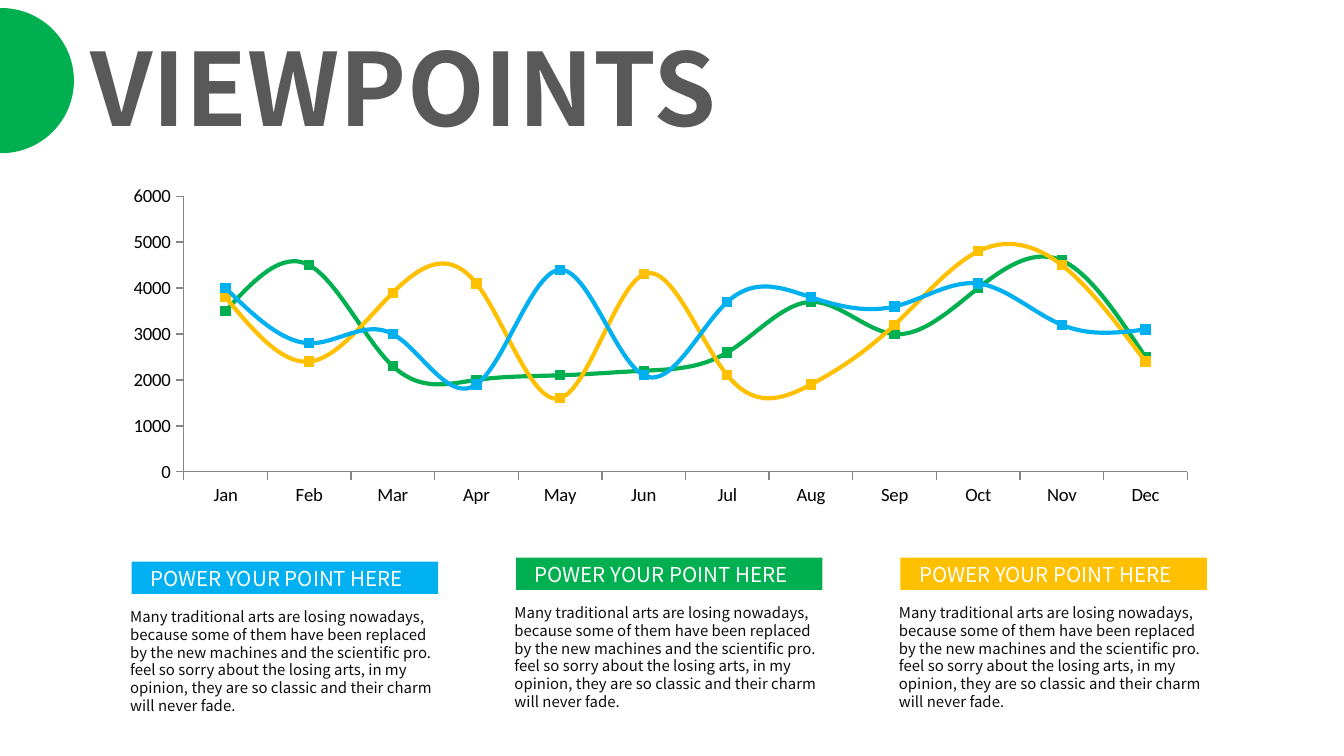
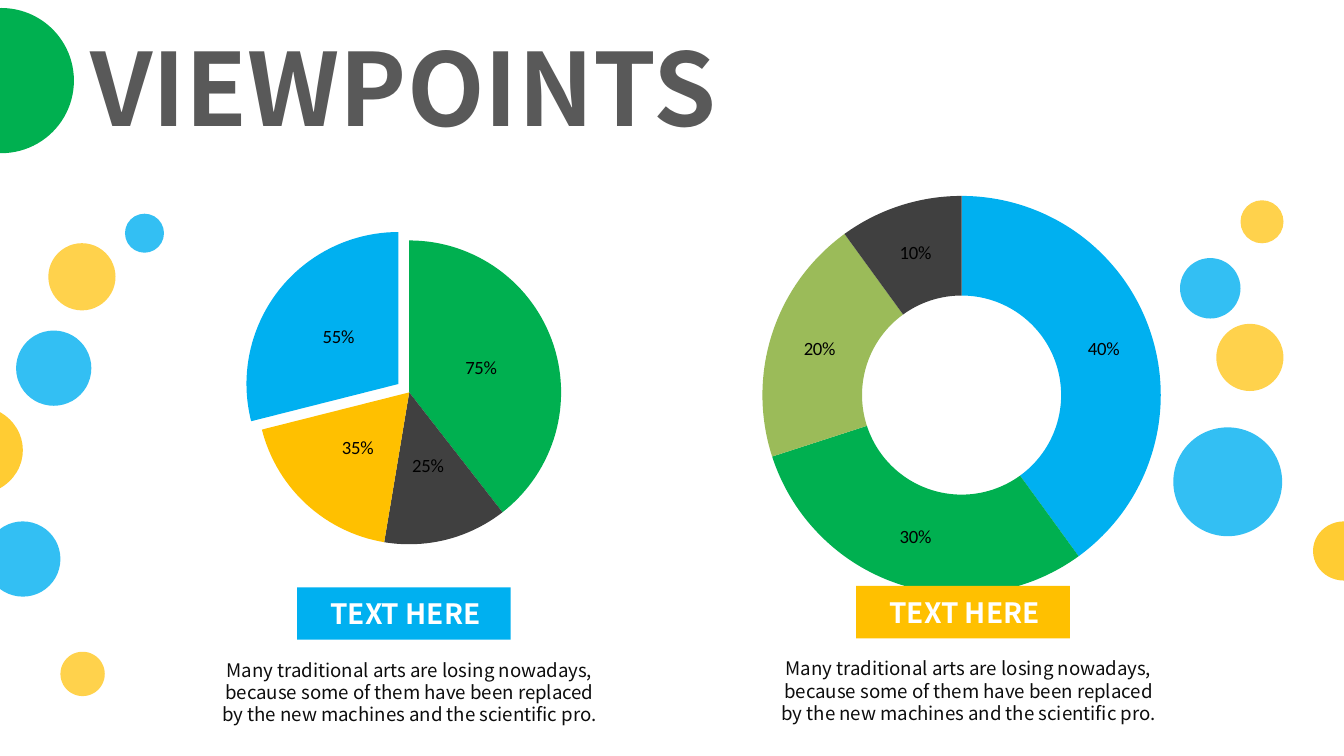
from dataclasses import dataclass

from lxml import etree
from pptx import Presentation
from pptx.chart.data import CategoryChartData
from pptx.dml.color import RGBColor
from pptx.enum.chart import XL_CHART_TYPE, XL_LABEL_POSITION, XL_MARKER_STYLE, XL_TICK_MARK
from pptx.enum.shapes import MSO_SHAPE
from pptx.enum.text import MSO_ANCHOR, MSO_AUTO_SIZE, PP_ALIGN
from pptx.oxml.ns import qn
from pptx.util import Inches, Pt

LINE, PIE, DOUGHNUT = XL_CHART_TYPE.LINE_MARKERS, XL_CHART_TYPE.PIE, XL_CHART_TYPE.DOUGHNUT
LABEL_CENTER = XL_LABEL_POSITION.CENTER
SQUARE = XL_MARKER_STYLE.SQUARE
TICK_OUT = XL_TICK_MARK.OUTSIDE
RECTANGLE, OVAL = MSO_SHAPE.RECTANGLE, MSO_SHAPE.OVAL
TOP = MSO_ANCHOR.TOP
GROW = MSO_AUTO_SIZE.SHAPE_TO_FIT_TEXT
LEFT, CENTER = PP_ALIGN.LEFT, PP_ALIGN.CENTER


@dataclass(frozen=True)
class Theme:
    """Colours, fonts and type sizes of the deck."""
    green: str = "00B050"
    blue: str = "00B0F0"
    amber: str = "FFC000"
    olive: str = "9BBB59"
    charcoal: str = "404040"
    title_grey: str = "595959"
    axis_grey: str = "868686"
    ink: str = "0D0D0D"
    white: str = "FFFFFF"
    black: str = "000000"
    text_font: str = "Noto Sans CJK SC"
    chart_font: str = "Calibri"
    title_size: int = 54
    banner_size: int = 15
    heading_size: int = 11
    body_size: int = 10
    chart_size: int = 10
    small_size: int = 8


THEME = Theme()
TITLE = "VIEWPOINTS"
STORY = [
    "Many traditional arts are losing nowadays,",
    "because some of them have been replaced",
    "by the new machines and the scientific pro.",
    "feel so sorry about the losing arts, in my",
    "opinion, they are so classic and their charm",
    "will never fade.",
]
MONTHS = ["Jan", "Feb", "Mar", "Apr", "May", "Jun", "Jul", "Aug", "Sep", "Oct", "Nov", "Dec"]
TRENDS = [
    (THEME.green, [3500, 4500, 2300, 2000, 2100, 2200, 2600, 3700, 3000, 4000, 4600, 2500]),
    (THEME.amber, [3800, 2400, 3900, 4100, 1600, 4300, 2100, 1900, 3200, 4800, 4500, 2400]),
    (THEME.blue, [4000, 2800, 3000, 1900, 4400, 2100, 3700, 3800, 3600, 4100, 3200, 3100]),
]
PIE_SLICES = [(THEME.green, 0.75), (THEME.charcoal, 0.25), (THEME.amber, 0.35), (THEME.blue, 0.55)]
RING_SLICES = [(THEME.blue, 40), (THEME.green, 30), (THEME.olive, 20), (THEME.charcoal, 10)]
BUBBLES = [
    (THEME.amber, 70, (0.36, 1.81, 0.5, 0.5)),
    (THEME.amber, 80, (-0.53, 3.02, 0.7, 0.66)),
    (THEME.blue, 80, (0.93, 1.59, 0.29, 0.29)),
    (THEME.blue, 80, (0.12, 2.46, 0.56, 0.56)),
    (THEME.blue, 80, (-0.11, 3.88, 0.56, 0.56)),
    (THEME.amber, 70, (0.45, 4.85, 0.33, 0.33)),
    (THEME.amber, 70, (9.23, 1.49, 0.32, 0.32)),
    (THEME.blue, 80, (8.78, 1.92, 0.45, 0.45)),
    (THEME.amber, 70, (9.05, 2.41, 0.5, 0.5)),
    (THEME.blue, 80, (8.73, 3.18, 0.81, 0.81)),
    (THEME.amber, 80, (9.77, 3.88, 0.46, 0.44)),
]


def rgb(color):
    """Turn a hex string into a colour."""
    return RGBColor.from_string(color)


def inches(box):
    """Turn left, top, width and height into lengths."""
    return [Inches(length) for length in box]


def add_block(shapes, kind, box, color, opacity=100):
    """Add a flat preset shape without an outline."""
    block = shapes.add_shape(kind, *inches(box))
    block.shadow.inherit = False
    block.line.fill.background()
    block.fill.solid()
    block.fill.fore_color.rgb = rgb(color)
    if opacity < 100:
        tint = block.fill._xPr.find(".//" + qn("a:srgbClr"))
        etree.SubElement(tint, qn("a:alpha"), val=str(opacity * 1000))


def write(frame, lines, size, color, bold=False, align=LEFT, wrap=False):
    """Write one paragraph for each line into a text frame."""
    frame.text = "\n".join(lines)
    frame.word_wrap = wrap
    frame.auto_size = GROW
    frame.vertical_anchor = TOP
    for paragraph in frame.paragraphs:
        paragraph.alignment = align
        font = paragraph.font
        font.name, font.size, font.bold = THEME.text_font, Pt(size), bold
        font.color.rgb = rgb(color)


def add_text(shapes, box, lines, size, color, **style):
    """Add a text box."""
    write(shapes.add_textbox(*inches(box)).text_frame, lines, size, color, **style)


def add_titled_slide(deck):
    """Add a slide with the shared title and the green half disc."""
    slide = deck.slides.add_slide(deck.slide_layouts[5])
    title = slide.shapes.title
    title.left, title.top, title.width, title.height = inches((0.57, 0.14, 5.59, 1.01))
    write(title.text_frame, [TITLE], THEME.title_size, THEME.title_grey, bold=True)
    add_block(slide.shapes, OVAL, (-0.53, 0.06, 1.08, 1.08), THEME.green)
    return slide


def add_plain_chart(slide, kind, box, categories, columns):
    """Add a chart with the deck's font and neither title nor legend."""
    data = CategoryChartData()
    data.categories = categories
    for number, values in enumerate(columns, 1):
        data.add_series(f"Series {number}", values)
    chart = slide.shapes.add_chart(kind, *inches(box), data).chart
    chart.has_title = chart.has_legend = False
    chart.font.name, chart.font.size = THEME.chart_font, Pt(THEME.chart_size)
    chart.font.color.rgb = rgb(THEME.black)
    return chart


def set_plot_area(chart, x, y, w, h):
    """Fix the inner plot area as fractions of the chart."""
    area = chart._chartSpace.find(".//" + qn("c:plotArea"))
    for stale in area.findall(qn("c:layout")):
        area.remove(stale)
    layout = etree.Element(qn("c:layout"))
    area.insert(0, layout)
    manual = etree.SubElement(layout, qn("c:manualLayout"))
    settings = dict(layoutTarget="inner", xMode="edge", yMode="edge", x=x, y=y, w=w, h=h)
    for tag, value in settings.items():
        etree.SubElement(manual, qn("c:" + tag), val=str(value))


def add_trend_chart(slide, box):
    """Add the smoothed monthly line chart."""
    chart = add_plain_chart(slide, LINE, box, MONTHS, [values for _, values in TRENDS])
    set_plot_area(chart, 0.07, 0.05, 0.89, 0.73)
    for axis in (chart.category_axis, chart.value_axis):
        axis.has_major_gridlines = False
        axis.major_tick_mark = TICK_OUT
        axis.format.line.color.rgb = rgb(THEME.axis_grey)
    chart.value_axis.minimum_scale = 0
    chart.value_axis.maximum_scale = 6000
    chart.value_axis.major_unit = 1000
    for series, (color, _) in zip(chart.plots[0].series, TRENDS):
        series.smooth = True
        series.format.line.color.rgb = rgb(color)
        series.format.line.width = Pt(2.25)
        marker = series.marker
        marker.style, marker.size = SQUARE, 5
        marker.format.fill.solid()
        marker.format.fill.fore_color.rgb = rgb(color)
        marker.format.line.color.rgb = rgb(color)


def add_share_chart(slide, kind, box, slices):
    """Add a pie or ring chart with coloured, labelled slices."""
    categories = [str(number) for number in range(1, len(slices) + 1)]
    chart = add_plain_chart(slide, kind, box, categories, [[share for _, share in slices]])
    plot = chart.plots[0]
    plot.vary_by_categories = True
    for index, (color, _) in enumerate(slices):
        fill = plot.series[0].points[index].format.fill
        fill.solid()
        fill.fore_color.rgb = rgb(color)
    plot.has_data_labels = True
    labels = plot.data_labels
    labels.number_format, labels.number_format_is_linked = "0%", False
    labels.show_value, labels.show_percentage = kind == PIE, kind == DOUGHNUT
    if kind == PIE:
        labels.position = LABEL_CENTER
    return chart


def pull_out_last_slice(chart, percent):
    """Move the last slice away from the centre of the pie."""
    last_slice = chart._chartSpace.findall(".//" + qn("c:dPt"))[-1]
    explosion = etree.Element(qn("c:explosion"), val=str(percent))
    last_slice.find(qn("c:spPr")).addprevious(explosion)


def add_story_panel(slide, left, top, color):
    """Add a coloured heading band with the story below it."""
    shapes = slide.shapes.add_group_shape().shapes
    add_block(shapes, RECTANGLE, (left, top, 2.28, 0.24), color)
    add_text(shapes, (left - 0.11, top + 0.29, 2.53, 0.91), STORY, THEME.small_size, THEME.ink)
    add_text(shapes, (left + 0.04, top - 0.02, 2.2, 0.29), ["POWER YOUR POINT HERE"],
             THEME.heading_size, THEME.white)


def add_caption(slide, left, top, color):
    """Add a coloured banner with a centred caption below it."""
    shapes = slide.shapes.add_group_shape().shapes
    add_block(shapes, RECTANGLE, (left, top, 1.59, 0.39), color)
    add_text(shapes, (left + 0.15, top + 0.02, 1.37, 0.35), ["TEXT HERE"],
             THEME.banner_size, THEME.white, bold=True)
    add_text(shapes, (left - 0.77, top + 0.48, 3.21, 0.61), STORY[:3],
             THEME.body_size, THEME.ink, align=CENTER, wrap=True)


def build_trend_slide(deck):
    """Build the slide with the line chart and three panels."""
    slide = add_titled_slide(deck)
    add_trend_chart(slide, (0.78, 1.32, 8.39, 2.81))
    panels = [(4.18, THEME.blue), (4.15, THEME.green), (4.15, THEME.amber)]
    for column, (top, color) in enumerate(panels):
        add_story_panel(slide, 0.98 + 2.86 * column, top, color)


def build_share_slide(deck):
    """Build the slide with the pie, the ring and the bubbles."""
    slide = add_titled_slide(deck)
    pie = add_share_chart(slide, PIE, (0.74, 1.55, 4.61, 2.74), PIE_SLICES)
    pull_out_last_slice(pie, 9)
    add_share_chart(slide, DOUGHNUT, (4.45, 1.32, 5.41, 3.24), RING_SLICES)
    add_caption(slide, 2.21, 4.37, THEME.blue)
    add_caption(slide, 6.37, 4.36, THEME.amber)
    for color, opacity, box in BUBBLES:
        add_block(slide.shapes, OVAL, box, color, opacity)


def main():
    """Build and save the deck."""
    deck = Presentation()
    deck.slide_width = Inches(10)
    deck.slide_height = deck.slide_width * 9 // 16
    build_trend_slide(deck)
    build_share_slide(deck)
    deck.save("out.pptx")


if __name__ == "__main__":
    main()
